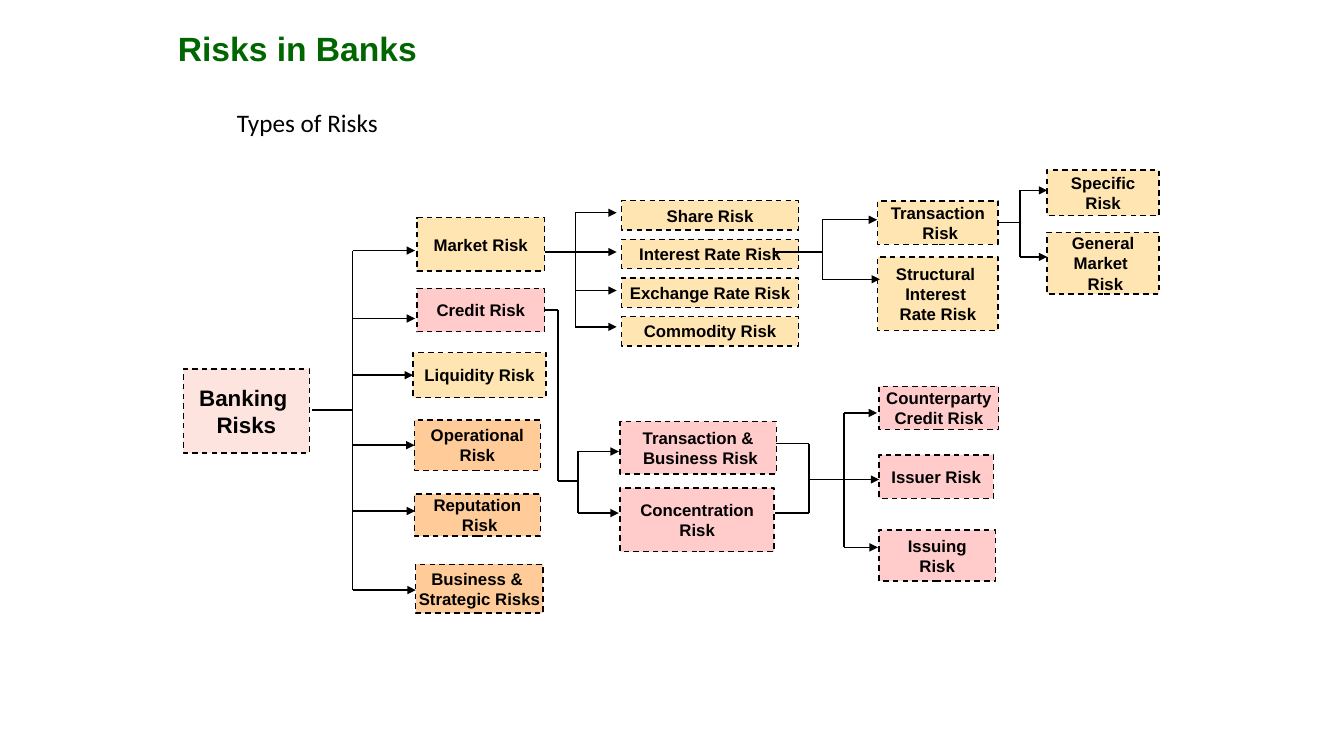
from dataclasses import dataclass

from lxml import etree
from pptx import Presentation
from pptx.dml.color import RGBColor
from pptx.enum.dml import MSO_LINE
from pptx.enum.shapes import MSO_CONNECTOR, MSO_SHAPE
from pptx.enum.text import MSO_ANCHOR, MSO_AUTO_SIZE, PP_ALIGN
from pptx.oxml.ns import qn
from pptx.util import Pt

HEADING = ("Risks in Banks", (120, -4, 720, 77))
TITLE = ("Types of Risks", (162, 54, 553, 48))

# Lines of text, (left, top, width, height), risk family
BOXES = [
    (["Banking ", "Risks"], (131, 263.5, 90, 60), "root"),
    (["Market Risk"], (298, 155.5, 91, 38), "market"),
    (["Credit Risk"], (298, 206, 91, 31), "credit"),
    (["Liquidity Risk"], (295, 252, 95, 32), "market"),
    (["Operational", "Risk"], (296, 300, 90, 36), "operational"),
    (["Reputation", " Risk"], (296, 353, 90, 30), "operational"),
    (["Business & ", "Strategic Risks"], (297, 403, 91, 35), "operational"),
    (["Transaction &", " Business Risk"], (443, 301, 111.5, 37.5), "credit"),
    (["Concentration", "Risk"], (443, 348.5, 110, 45.5), "credit"),
    (["Transaction", " Risk"], (627, 143.5, 86, 31), "market"),
    (["Structural ", "Interest ", "Rate Risk"], (627, 183.5, 86, 52.5), "market"),
    (["Counterparty", "Credit Risk"], (628, 276, 85.5, 31), "credit"),
    (["Issuer Risk"], (628, 325, 81.5, 31), "credit"),
]
WRAPPED_BOXES = [
    (["Issuing Risk"], (628, 378.5, 83, 36.5), "credit"),
    (["Specific", "Risk"], (748, 121.5, 80, 32.5), "market"),
    (["General Market ", " Risk"], (748, 166, 80, 44), "market"),
]
MARKET_KINDS = ["Share Risk", "Interest Rate Risk", "Exchange Rate Risk", "Commodity Risk"]
MARKET_KINDS_FRAME = (444, 143.3, 126.5, 21)
MARKET_KINDS_STEP = 27.6

# Start of the stem, x of the trunk, arrow tips
BRANCHES = [
    ((223, 293), 252, [(296.5, 179), (296.5, 227.5), (295, 268),
                       (296, 318), (296.5, 365), (297, 421.5)]),
    ((389, 180), 411, [(440.5, y) for y in (152, 180, 207.5, 233.5)]),
    ((553.5, 180), 587.5, [(626.5, 157), (628.5, 199.5)]),
    ((713, 159), 728.5, [(748, 136), (748, 183.5)]),
    ((398.5, 343.5), 413, [(442, 322.5), (442, 366.5)]),
    ((578, 342.5), 603, [(626.5, 295), (628, 342.5), (627, 391)]),
]
LINKS = [
    ((389, 221.5), (398.5, 221.5)),
    ((398.5, 221.5), (398.5, 343.5)),
    ((554.5, 317), (578, 317)),
    ((553.5, 366.5), (578, 366.5)),
    ((578, 317), (578, 366.5)),
]


@dataclass(frozen=True)
class Theme:
    families = {"root": "FECAC0", "market": "FFCC66",
                "credit": "FF9999", "operational": "FF9933"}
    ink = "000000"
    heading = "006600"
    heading_size = 24
    title_size = 18
    root_size = 16
    box_size = 12
    line_width = 1
    font = "Arial"
    title_font = "Calibri"
    alpha = "50000"


THEME = Theme()


def points(values):
    return [Pt(value) for value in values]


def write(frame, lines, size, color=THEME.ink, font=THEME.font, bold=True,
          align=PP_ALIGN.LEFT, spacing=1.0, **frame_format):
    for name, value in frame_format.items():
        setattr(frame, name, value)
    for index, line in enumerate(lines):
        paragraph = frame.add_paragraph() if index else frame.paragraphs[0]
        paragraph.alignment = align
        paragraph.line_spacing = spacing
        run = paragraph.add_run()
        run.text = line
        run.font.color.rgb = RGBColor.from_string(color)
        for name, value in {"size": Pt(size), "name": font, "bold": bold}.items():
            setattr(run.font, name, value)


def add_box(slide, lines, frame, family, wrap=False):
    box = slide.shapes.add_shape(MSO_SHAPE.RECTANGLE, *points(frame))
    box.shadow.inherit = False
    box.fill.solid()
    box.fill.fore_color.rgb = RGBColor.from_string(THEME.families[family])
    tint = box.fill._xPr.find(qn("a:solidFill"))[0]
    etree.SubElement(tint, qn("a:alpha")).set("val", THEME.alpha)
    box.line.color.rgb = RGBColor.from_string(THEME.ink)
    box.line.width = Pt(THEME.line_width)
    box.line.dash_style = MSO_LINE.DASH
    size = THEME.root_size if family == "root" else THEME.box_size
    write(box.text_frame, lines, size, align=PP_ALIGN.CENTER,
          word_wrap=wrap, vertical_anchor=MSO_ANCHOR.MIDDLE)
    return box


def side_middles(box):
    """Map the middle of the left and right sides to (box, connection site)."""
    middle = box.top + box.height // 2
    return {(box.left, middle): (box, 1), (box.left + box.width, middle): (box, 3)}


def add_line(slide, start, end, joints, arrow=False):
    begin, finish = tuple(points(start)), tuple(points(end))
    line = slide.shapes.add_connector(MSO_CONNECTOR.STRAIGHT, *begin, *finish)
    line.line.color.rgb = RGBColor.from_string(THEME.ink)
    line.line.width = Pt(THEME.line_width)
    if arrow:
        etree.SubElement(line.line._get_or_add_ln(), qn("a:tailEnd")).set("type", "triangle")
    etree.SubElement(line._element.spPr, qn("a:effectLst"))
    if begin in joints:
        line.begin_connect(*joints[begin])
    if finish in joints:
        line.end_connect(*joints[finish])


def add_branch(slide, stem, trunk, tips, joints):
    heights = [y for _, y in tips]
    add_line(slide, stem, (trunk, stem[1]), joints)
    add_line(slide, (trunk, min(heights)), (trunk, max(heights)), joints)
    for tip in tips:
        add_line(slide, (trunk, tip[1]), tip, joints, arrow=True)


def main():
    deck = Presentation()
    deck.slide_width, deck.slide_height = Pt(960), Pt(540)
    slide = deck.slides.add_slide(deck.slide_layouts[5])

    text, frame = TITLE
    title = slide.shapes.title
    title.left, title.top, title.width, title.height = points(frame)
    write(title.text_frame, [text], THEME.title_size, font=THEME.title_font,
          bold=False, spacing=0.9, word_wrap=True,
          vertical_anchor=MSO_ANCHOR.BOTTOM, auto_size=MSO_AUTO_SIZE.NONE)

    text, frame = HEADING
    heading = slide.shapes.add_textbox(*points(frame))
    write(heading.text_frame, [text], THEME.heading_size, THEME.heading,
          word_wrap=True, vertical_anchor=MSO_ANCHOR.MIDDLE)

    boxes = [add_box(slide, *box) for box in BOXES]
    boxes += [add_box(slide, *box, wrap=True) for box in WRAPPED_BOXES]
    left, top, width, height = MARKET_KINDS_FRAME
    for row, kind in enumerate(MARKET_KINDS):
        frame = (left, top + row * MARKET_KINDS_STEP, width, height)
        boxes.append(add_box(slide, [kind], frame, "market"))

    joints = {}
    for box in boxes:
        joints.update(side_middles(box))
    for start, end in LINKS:
        add_line(slide, start, end, joints)
    for stem, trunk, tips in BRANCHES:
        add_branch(slide, stem, trunk, tips, joints)

    deck.save("out.pptx")


if __name__ == "__main__":
    main()
